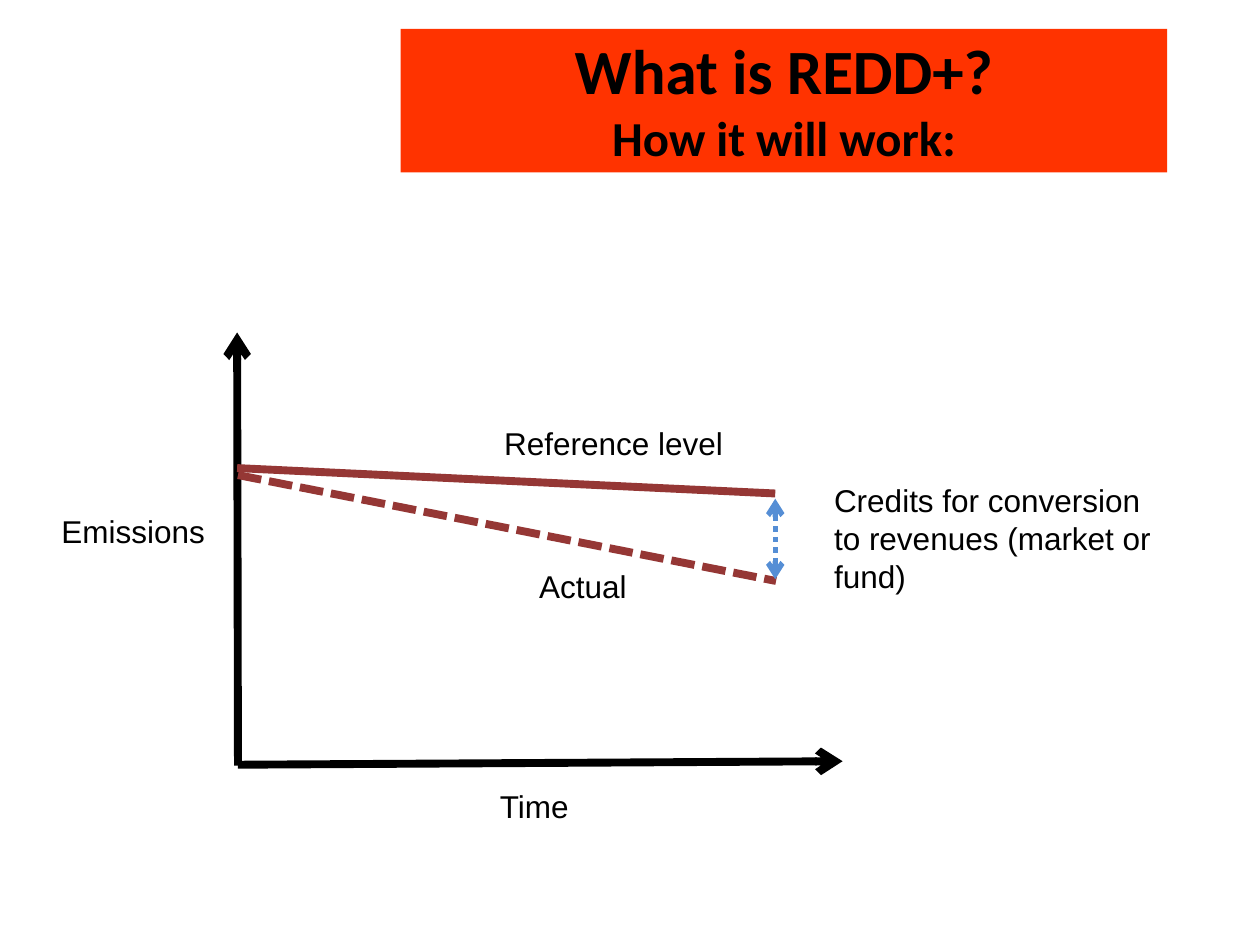
from dataclasses import dataclass

from lxml.etree import SubElement
from pptx import Presentation
from pptx.dml.color import RGBColor
from pptx.enum.dml import MSO_LINE
from pptx.enum.shapes import MSO_CONNECTOR, MSO_SHAPE
from pptx.enum.text import MSO_ANCHOR, PP_ALIGN
from pptx.oxml.ns import qn
from pptx.util import Pt


@dataclass(frozen=True)
class Theme:
    black: str = "000000"
    banner: str = "FF3300"
    trend: str = "953735"
    credit: str = "558ED5"
    title_font: str = "Calibri"
    body_font: str = "Arial"
    title_size: float = 36
    subtitle_size: float = 27.9
    label_size: float = 18
    thick: float = 4.5
    thin: float = 3


THEME = Theme()


def add_span(para, text, size=THEME.label_size, color=THEME.black,
             font=THEME.body_font, bold=False):
    span = para.add_run()
    span.text = text
    span.font.size = Pt(size)
    span.font.name = font
    span.font.bold = bold
    span.font.color.rgb = RGBColor.from_string(color)


def add_label(page, text, left, top, width, height=29):
    box = page.shapes.add_textbox(Pt(left), Pt(top), Pt(width), Pt(height))
    box.text_frame.word_wrap = True
    add_span(box.text_frame.paragraphs[0], text)


def add_line(page, start, end, color, width=THEME.thick, dash=None, arrows=()):
    """Draw a line; arrows names the ends to mark: headEnd, tailEnd."""
    line = page.shapes.add_connector(
        MSO_CONNECTOR.STRAIGHT, *(Pt(value) for value in (*start, *end)))
    line.line.color.rgb = RGBColor.from_string(color)
    line.line.width = Pt(width)
    if dash is not None:
        line.line.dash_style = dash
    properties = line._element.spPr
    outline = properties.find(qn("a:ln"))
    for end_name in arrows:
        SubElement(outline, qn(f"a:{end_name}"), type="arrow")
    SubElement(properties, qn("a:effectLst"))


def add_banner(page):
    banner = page.shapes.add_shape(
        MSO_SHAPE.RECTANGLE, Pt(229), Pt(16.5), Pt(438), Pt(82))
    banner.shadow.inherit = False
    banner.fill.solid()
    banner.fill.fore_color.rgb = RGBColor.from_string(THEME.banner)
    banner.line.fill.background()
    frame = banner.text_frame
    frame.word_wrap = True
    frame.vertical_anchor = MSO_ANCHOR.BOTTOM
    title, subtitle = frame.paragraphs[0], frame.add_paragraph()
    for para, text, size in ((title, "What is REDD+?", THEME.title_size),
                             (subtitle, "How it will work:", THEME.subtitle_size)):
        para.alignment = PP_ALIGN.CENTER
        add_span(para, text, size=size, font=THEME.title_font, bold=True)


def add_emissions_diagram(page):
    add_line(page, (136, 437.5), (135.5, 190), THEME.black, arrows=["tailEnd"])
    add_line(page, (136, 437), (481.5, 435), THEME.black, arrows=["tailEnd"])
    add_label(page, "Emissions", 28, 289, 109)
    add_label(page, "Time", 278.5, 446, 109)

    add_line(page, (135.5, 267.5), (443, 282), THEME.trend)
    add_line(page, (136, 271.5), (443.5, 332), THEME.trend,
             dash=MSO_LINE.SQUARE_DOT)
    add_label(page, "Actual", 301, 320.5, 109)
    add_label(page, "Reference level", 281, 239, 142.5)

    add_line(page, (443, 285), (443, 331), THEME.credit, width=THEME.thin,
             dash=MSO_LINE.ROUND_DOT, arrows=["headEnd", "tailEnd"])
    add_label(page, "Credits for conversion to revenues (market or fund)",
              469.5, 271.5, 201, 73)


def main():
    deck = Presentation()
    deck.slide_width, deck.slide_height = Pt(720), Pt(540)
    page = deck.slides.add_slide(deck.slide_layouts[6])
    add_banner(page)
    add_emissions_diagram(page)
    deck.save("out.pptx")


if __name__ == "__main__":
    main()
